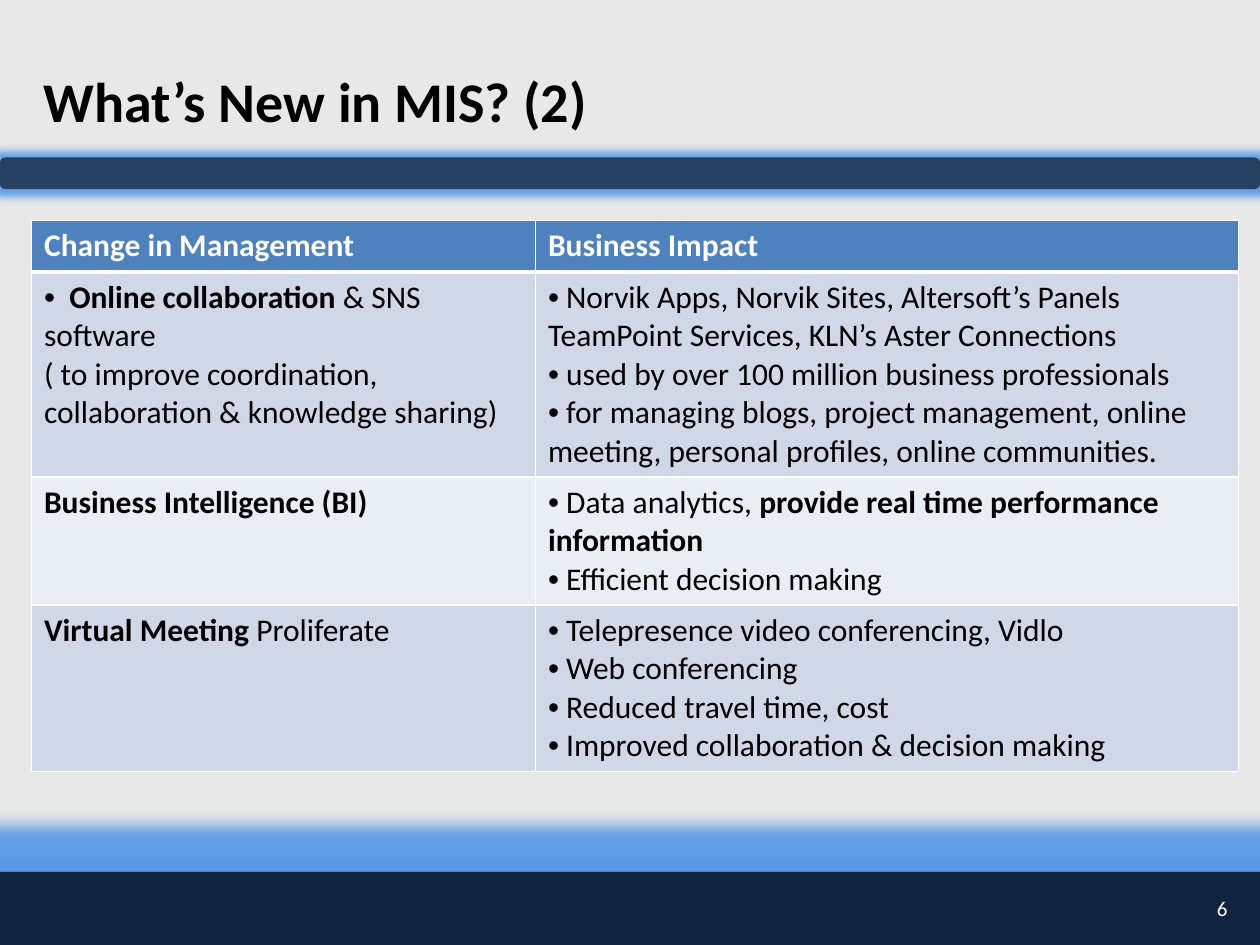
from dataclasses import dataclass
from lxml.etree import SubElement
from pptx import Presentation
from pptx.dml.color import RGBColor
from pptx.enum.shapes import MSO_SHAPE as Kind
from pptx.enum.text import MSO_ANCHOR as Anchor, PP_ALIGN as Align
from pptx.oxml import parse_xml
from pptx.oxml.ns import nsdecls, qn
from pptx.util import Inches, Pt

WHITE, BLACK, GLOW = "FFFFFF", "000000", "5596E6"


@dataclass
class Run:
    text: str
    bold: bool = False


@dataclass
class Para:
    runs: list[Run]
    dot: bool = False


@dataclass
class Row:
    high: float
    fill: str
    ink: str
    rule: tuple[float, float]
    cells: list[list[Para]]


@dataclass
class Bar:
    kind: Kind
    top: float
    high: float
    fill: str
    glow: float


@dataclass
class Label:
    text: str
    box: tuple[float, float, float, float]
    size: int
    ink: str
    bold: bool
    align: Align


def color(code: str) -> RGBColor:
    return RGBColor.from_string(code)


def dots(*items: str) -> list[Para]:
    return [Para([Run(" " + item)], True) for item in items]


def head(text: str) -> list[Para]:
    return [Para([Run(text, True)])]


BARS = [
    Bar(Kind.RECTANGLE, 6.92, 0.58, "0F243E", 18),
    Bar(Kind.ROUNDED_RECTANGLE, 1.25, 0.25, "254061", 8),
]
LABELS = [
    Label("What’s New in MIS? (2)", (0.25, 0.42, 8.67, 0.75), 32, BLACK, True, Align.LEFT),
    Label("6", (9.42, 7, 0.42, 0.42), 12, WHITE, False, Align.RIGHT),
]
ROWS = [
    Row(0.41, "4F81BD", WHITE, (1, 3), [head("Change in Management"), head("Business Impact")]),
    Row(1.62, "D0D8E8", BLACK, (3, 1), [
        [Para([Run("  "), Run("Online collaboration", True), Run(" & SNS software")], True),
         Para([Run("( to improve coordination, collaboration & knowledge sharing)")])],
        dots("Norvik Apps, Norvik Sites, Altersoft’s Panels TeamPoint Services, KLN’s Aster Connections",
             "used by over 100 million business professionals",
             "for managing blogs, project management, online meeting, personal profiles, online communities."),
    ]),
    Row(1.01, "E9EDF4", BLACK, (1, 1), [
        head("Business Intelligence (BI)"),
        [Para([Run(" Data analytics, "), Run("provide real time performance information", True)], True),
         *dots("Efficient decision making")],
    ]),
    Row(1.32, "D0D8E8", BLACK, (1, 1), [
        [Para([Run("Virtual Meeting ", True), Run("Proliferate")])],
        dots("Telepresence video conferencing, Vidlo", "Web conferencing",
             "Reduced travel time, cost", "Improved collaboration & decision making"),
    ]),
]


def style(para, size: int, ink: str) -> None:
    font = para.font
    font.name, font.size = "Calibri", Pt(size)
    font.color.rgb = color(ink)


def draw_bar(slide, bar: Bar) -> None:
    shape = slide.shapes.add_shape(bar.kind, 0, Inches(bar.top), Inches(10), Inches(bar.high))
    shape.fill.solid()
    shape.fill.fore_color.rgb = color(bar.fill)
    shape.line.fill.background()
    shape.shadow.inherit = False
    effects = shape._element.spPr.find(qn("a:effectLst"))
    effects.append(parse_xml(
        f'<a:glow {nsdecls("a")} rad="{Pt(bar.glow)}"><a:srgbClr val="{GLOW}">'
        '<a:alpha val="90000"/></a:srgbClr></a:glow>'))


def draw_label(slide, label: Label) -> None:
    frame = slide.shapes.add_textbox(*map(Inches, label.box)).text_frame
    frame.word_wrap = True
    frame.vertical_anchor = Anchor.MIDDLE
    para = frame.paragraphs[0]
    para.text, para.alignment = label.text, label.align
    style(para, label.size, label.ink)
    para.font.bold = label.bold


def write_cell(cell, paras: list[Para], ink: str) -> None:
    frame = cell.text_frame
    for i, item in enumerate(paras):
        para = frame.add_paragraph() if i else frame.paragraphs[0]
        if item.dot:
            props = para._p.get_or_add_pPr()
            SubElement(props, qn("a:buFont"), typeface="Arial")
            SubElement(props, qn("a:buChar"), char="•")
        style(para, 18, ink)
        for part in item.runs:
            run = para.add_run()
            run.text, run.font.bold = part.text, part.bold


def rule_cell(cell, top: float, base: float) -> None:
    props = cell._tc.get_or_add_tcPr()
    for i, (side, width) in enumerate(zip("LRTB", (1, 1, top, base))):
        props.insert(i, parse_xml(
            f'<a:ln{side} {nsdecls("a")} w="{Pt(width)}"><a:solidFill>'
            f'<a:srgbClr val="{WHITE}"/></a:solidFill></a:ln{side}>'))


def draw_table(slide, rows: list[Row]) -> None:
    high = sum(row.high for row in rows)
    table = slide.shapes.add_table(
        len(rows), 2, Inches(0.25), Inches(1.75), Inches(9.58), Inches(high)).table
    table.first_row = table.horz_banding = False
    for col, width in zip(table.columns, (4, 5.58)):
        col.width = Inches(width)
    for line, row in zip(table.rows, rows):
        line.height = Inches(row.high)
        for cell, paras in zip(line.cells, row.cells):
            cell.fill.solid()
            cell.fill.fore_color.rgb = color(row.fill)
            rule_cell(cell, *row.rule)
            write_cell(cell, paras, row.ink)


def main() -> None:
    deck = Presentation()
    deck.slide_width, deck.slide_height = Inches(10), Inches(7.5)
    slide = deck.slides.add_slide(deck.slide_layouts[6])
    back = slide.background.fill
    back.solid()
    back.fore_color.rgb = color("E8E8E8")
    for bar in BARS:
        draw_bar(slide, bar)
    draw_table(slide, ROWS)
    for label in LABELS:
        draw_label(slide, label)
    deck.save("out.pptx")


if __name__ == "__main__":
    main()
